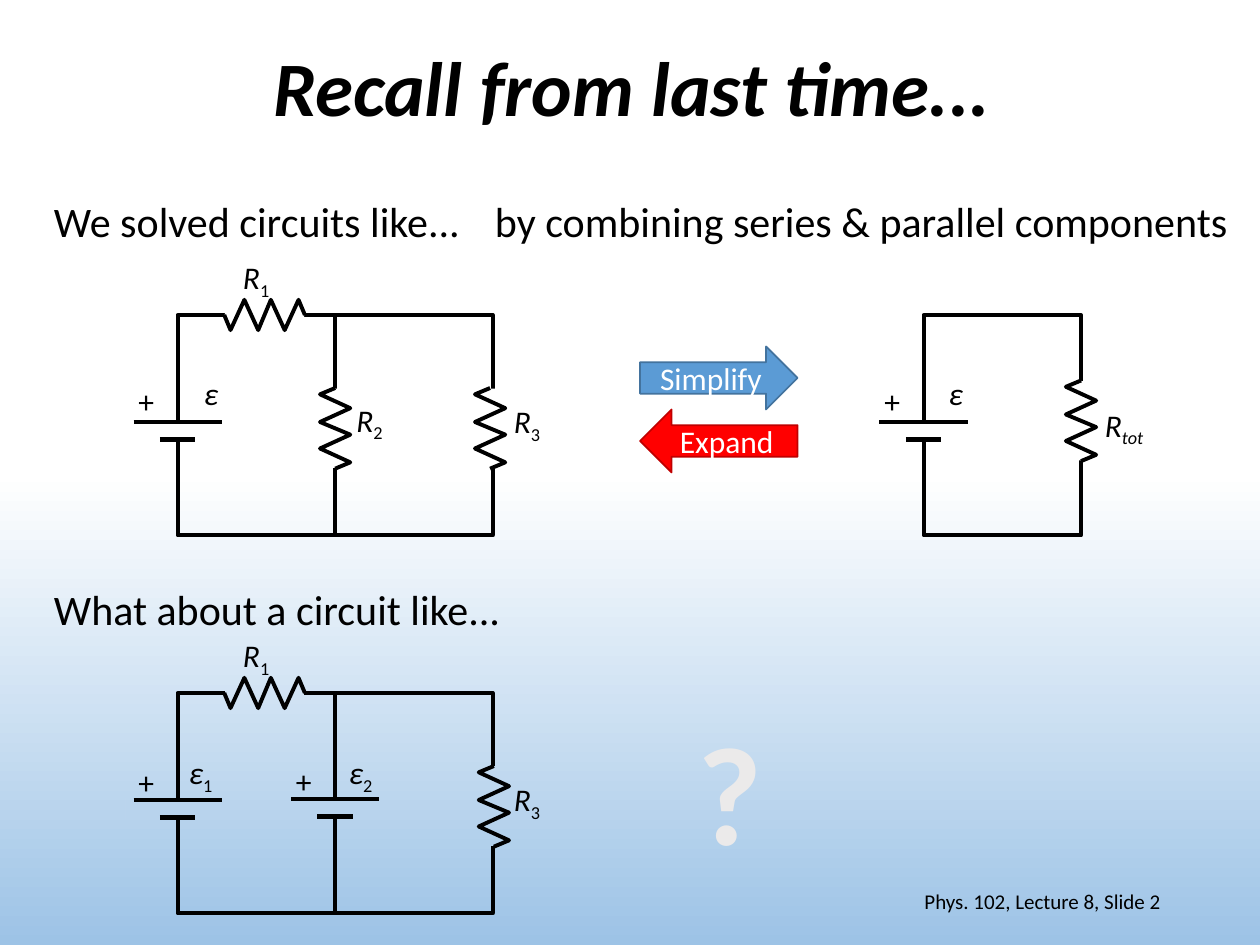
import pptx
import pptx.util
import pptx.dml.color
import pptx.enum.shapes
import pptx.enum.text
import pptx.oxml.ns
from lxml import etree

Inches, Pt = pptx.util.Inches, pptx.util.Pt
SHAPE = pptx.enum.shapes.MSO_SHAPE
ALIGN = pptx.enum.text.PP_ALIGN
MIDDLE = pptx.enum.text.MSO_ANCHOR.MIDDLE
BLACK, WHITE = "000000", "FFFFFF"
LOOP_H = 1.75
ZIGZAG = [(-0.32, 0), (-0.27, 0.12), (-0.16, -0.12), (-0.05, 0.12),
          (0.05, -0.12), (0.16, 0.12), (0.27, -0.12), (0.32, 0)]


def rgb(color):
    return pptx.dml.color.RGBColor.from_string(color)


def add_run(p, text, size, color=BLACK, bold=False, italic=False, sub=False):
    r = p.add_run()
    r.text = text
    r.font.size, r.font.name = Pt(size), "Calibri"
    r.font.bold, r.font.italic = bold, italic
    r.font.color.rgb = rgb(color)
    if sub:
        r._r.get_or_add_rPr().set("baseline", "-25000")


def style(sp, fill=None, line=None, width=2.25):
    sp.shadow.inherit = False
    if fill:
        sp.fill.solid()
        sp.fill.fore_color.rgb = rgb(fill)
    else:
        sp.fill.background()
    if line:
        sp.line.color.rgb = rgb(line)
        sp.line.width = Pt(width)
    else:
        sp.line.fill.background()


def add_text(shapes, x, y, w, h, align=ALIGN.LEFT, wrap=False):
    """Add an empty text box and return its frame."""
    tf = shapes.add_textbox(Inches(x), Inches(y), Inches(w), Inches(h)).text_frame
    tf.word_wrap = wrap
    tf.paragraphs[0].alignment = align
    return tf


def add_label(shapes, x, y, w, symbol, sub="", sub_italic=False):
    p = add_text(shapes, x, y, w, 0.4).paragraphs[0]
    add_run(p, symbol, 18, italic=symbol != "+")
    if sub:
        add_run(p, sub, 18, italic=sub_italic, sub=True)


def add_wire(shapes, x1, y1, x2, y2, width=2.25):
    c = shapes.add_connector(pptx.enum.shapes.MSO_CONNECTOR.STRAIGHT,
                             Inches(x1), Inches(y1), Inches(x2), Inches(y2))
    c.line.color.rgb = rgb(BLACK)
    c.line.width = Pt(width)
    etree.SubElement(c._element.spPr, pptx.oxml.ns.qn("a:effectLst"))
    return c


def add_gap(shapes, cx, cy, w, h, fill):
    """Interrupt a wire; without a fill the slide background shows."""
    sp = shapes.add_shape(SHAPE.RECTANGLE, Inches(cx - w / 2), Inches(cy - h / 2),
                          Inches(w), Inches(h))
    style(sp, fill)
    if not fill:
        sp._element.spPr.remove(sp._element.spPr.find(pptx.oxml.ns.qn("a:noFill")))
        sp._element.set("useBgFill", "1")


def add_resistor(shapes, cx, cy, fill, vertical=True):
    add_gap(shapes, cx, cy, *((0.26, 0.63) if vertical else (0.63, 0.26)), fill)
    points = [(Inches(cx + b), Inches(cy - a)) if vertical
              else (Inches(cx + a), Inches(cy + b)) for a, b in ZIGZAG]
    builder = shapes.build_freeform(*points[0])
    builder.add_line_segments(points[1:], close=False)
    style(builder.convert_to_shape(), fill, BLACK)


def add_battery(shapes, x, y, fill, plus_rise):
    """Place a battery whose long plate is centred at x, y."""
    add_gap(shapes, x, y + 0.07, 0.83, 0.16, fill)
    add_wire(shapes, x - 0.35, y, x + 0.35, y)
    add_wire(shapes, x - 0.14, y + 0.14, x + 0.14, y + 0.14, 3)
    add_label(shapes, x - 0.41, y - plus_rise, 0.33, "+")


def add_loop(s, x, y, w):
    """Start a circuit group with its outer wire."""
    shapes = s.shapes.add_group_shape().shapes
    loop = shapes.add_shape(SHAPE.RECTANGLE, Inches(x), Inches(y),
                            Inches(w), Inches(LOOP_H))
    style(loop, None, BLACK)
    return shapes, loop


def add_middle_wire(shapes, loop, x, y):
    wire = add_wire(shapes, x, y, x, y + LOOP_H)
    wire.begin_connect(loop, 0)
    wire.end_connect(loop, 2)


def two_branch_circuit(s, x, y, fill, second_battery):
    shapes, loop = add_loop(s, x, y, 2.5)
    mid = x + 1.25
    add_resistor(shapes, x + 0.69, y, fill, vertical=False)
    add_label(shapes, x + 0.42, y - 0.5, 0.42, "R", "1")
    add_resistor(shapes, x + (2.51 if second_battery else 2.48), y + 0.9, fill)
    add_label(shapes, x + 2.57, y + 0.64, 0.42, "R", "3")
    add_battery(shapes, x, y + 0.85, fill, 0.34 if second_battery else 0.37)
    add_middle_wire(shapes, loop, mid, y)
    if second_battery:
        add_battery(shapes, mid, y + 0.84, fill, 0.34)
        add_label(shapes, x - 0.01, y + 0.43, 0.4, "ε", "1")
        add_label(shapes, mid + 0.01, y + 0.43, 0.4, "ε", "2")
    else:
        add_resistor(shapes, mid, y + 0.9, fill)
        add_label(shapes, mid + 0.07, y + 0.63, 0.42, "R", "2")
        add_label(shapes, x + 0.11, y + 0.42, 0.32, "ε")


def simple_circuit(s, x, y, fill):
    shapes, _ = add_loop(s, x, y, 1.25)
    add_battery(shapes, x, y + 0.85, fill, 0.37)
    add_resistor(shapes, x + 1.25, y + 0.84, fill)
    add_label(shapes, x + 1.34, y + 0.67, 0.53, "R", "tot", sub_italic=True)
    add_label(shapes, x + 0.1, y + 0.42, 0.32, "ε")


def arrows(s, x, y, w, h):
    kinds = [(SHAPE.RIGHT_ARROW, "Simplify", "5B9BD5", "43739E"),
             (SHAPE.LEFT_ARROW, "Expand", "FF0000", "C00000")]
    for i, (kind, text, fill, line) in enumerate(kinds):
        sp = s.shapes.add_shape(kind, Inches(x), Inches(y + i * h / 2),
                                Inches(w), Inches(h / 2))
        style(sp, fill, line, 1)
        sp.text_frame.vertical_anchor = MIDDLE
        p = sp.text_frame.paragraphs[0]
        p.alignment = ALIGN.CENTER
        add_run(p, text, 18, WHITE)


def background(s):
    fill = s.background.fill
    fill.gradient()
    fill.gradient_angle = 270
    for stop, pos, color in zip(fill.gradient_stops, (0.5, 1), (WHITE, "9DC3E6")):
        stop.position = pos
        stop.color.rgb = rgb(color)


def title(s, x, y, w, h):
    sp = s.shapes.title
    sp.left, sp.top, sp.width, sp.height = map(Inches, (x, y, w, h))
    sp.text_frame.vertical_anchor = MIDDLE
    p = sp.text_frame.paragraphs[0]
    p.alignment, p.line_spacing = ALIGN.CENTER, 0.9
    add_run(p, "Recall from last time...", 44, bold=True, italic=True)


def main():
    prs = pptx.Presentation()
    prs.slide_width, prs.slide_height = Inches(10), Inches(7.5)
    s = prs.slides.add_slide(prs.slide_layouts[5])
    background(s)
    title(s, 0.71, 0, 8.62, 1.45)
    for x, y, w, text in [
            (0.33, 1.5, 3.45, "We solved circuits like..."),
            (3.83, 1.5, 6.07, "by combining series & parallel components"),
            (0.33, 4.58, 3.77, "What about a circuit like...")]:
        add_run(add_text(s.shapes, x, y, w, 0.5).paragraphs[0], text, 24)
    two_branch_circuit(s, 1.41, 2.5, WHITE, second_battery=False)
    arrows(s, 5.08, 2.75, 1.25, 1)
    simple_circuit(s, 7.33, 2.5, WHITE)
    two_branch_circuit(s, 1.41, 5.5, None, second_battery=True)
    tf = add_text(s.shapes, 5.42, 5.55, 0.75, 1.45, ALIGN.CENTER, wrap=True)
    add_run(tf.paragraphs[0], "?", 80, "EBEAEA", bold=True)
    tf = add_text(s.shapes, 7.06, 6.95, 2.25, 0.4, ALIGN.RIGHT, wrap=True)
    tf.vertical_anchor = MIDDLE
    add_run(tf.paragraphs[0], "Phys. 102, Lecture 8, Slide 2", 12)
    prs.save("out.pptx")


if __name__ == "__main__":
    main()
